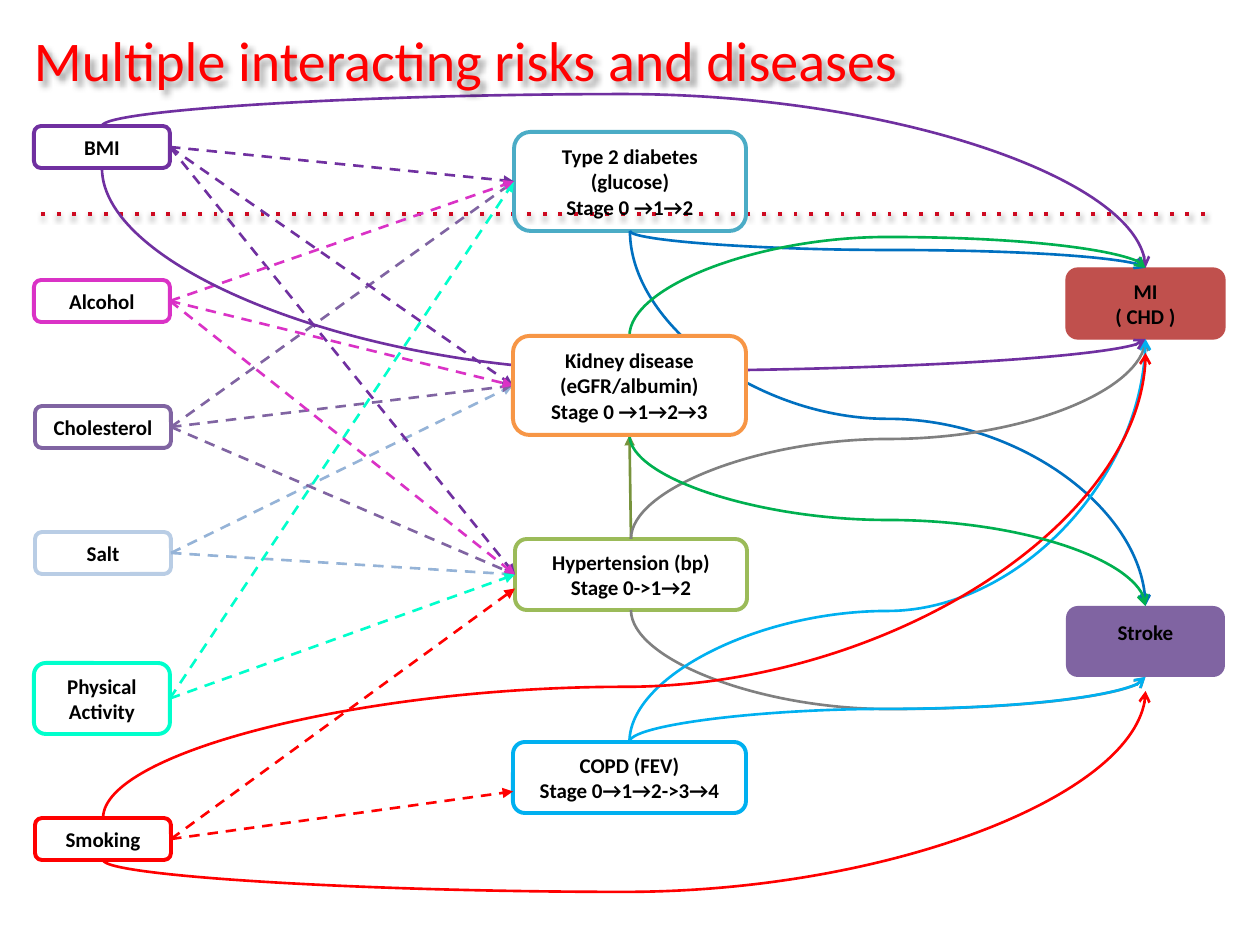
from lxml import etree
from pptx import Presentation
from pptx.dml.color import RGBColor
from pptx.enum.shapes import MSO_CONNECTOR, MSO_SHAPE
from pptx.enum.text import MSO_ANCHOR, PP_ALIGN
from pptx.oxml.ns import qn
from pptx.util import Emu, Pt

STRAIGHT, CURVE = MSO_CONNECTOR.STRAIGHT, MSO_CONNECTOR.CURVE
ROUNDED = MSO_SHAPE.ROUNDED_RECTANGLE
MIDDLE, TOP_ANCHOR = MSO_ANCHOR.MIDDLE, MSO_ANCHOR.TOP
CENTER = PP_ALIGN.CENTER
TOP, LEFT, BOTTOM, RIGHT = range(4)

BLACK = RGBColor(0x00, 0x00, 0x00)
WHITE = RGBColor(0xFF, 0xFF, 0xFF)
RED = RGBColor(0xFF, 0x00, 0x00)
CRIMSON = RGBColor(0xCD, 0x09, 0x20)
BRICK = RGBColor(0xC0, 0x50, 0x4D)
VIOLET = RGBColor(0x80, 0x64, 0xA2)
PURPLE = RGBColor(0x70, 0x30, 0xA0)
MAGENTA = RGBColor(0xDA, 0x32, 0xC6)
PALE_BLUE = RGBColor(0xB9, 0xCD, 0xE5)
SOFT_BLUE = RGBColor(0x95, 0xB3, 0xD7)
MINT = RGBColor(0x00, 0xFF, 0xCC)
TEAL = RGBColor(0x4B, 0xAC, 0xC6)
ORANGE = RGBColor(0xF7, 0x96, 0x46)
OLIVE = RGBColor(0x9B, 0xBB, 0x59)
DARK_OLIVE = RGBColor(0x77, 0x93, 0x3C)
SKY = RGBColor(0x00, 0xB0, 0xF0)
BLUE = RGBColor(0x00, 0x70, 0xC0)
GREEN = RGBColor(0x00, 0xB0, 0x50)
GREY = RGBColor(0x80, 0x80, 0x80)

FONT = "Calibri"
EMU_PER_PX = 914400 / 126

BOXES = {
    "mi": ("MI\n( CHD )", (1066, 268, 159, 71), BRICK, BRICK),
    "stroke": ("Stroke", (1066, 606, 159, 71), VIOLET, None),
    "salt": ("Salt", (35, 532, 136, 42), WHITE, PALE_BLUE),
    "cholesterol": ("Cholesterol", (35, 406, 136, 42), None, VIOLET),
    "activity": ("Physical Activity", (34, 663, 136, 71), None, MINT),
    "diabetes": ("Type 2 diabetes (glucose)\nStage 0 →1→2", (514, 132, 232, 99), None, TEAL),
    "hypertension": ("Hypertension (bp)\nStage 0->1→2", (515, 539, 232, 71), WHITE, OLIVE),
    "copd": ("COPD (FEV)\nStage 0→1→2->3→4", (513, 742, 233, 71), WHITE, SKY),
    "bmi": ("BMI", (34, 126, 136, 42), WHITE, PURPLE),
    "alcohol": ("Alcohol", (34, 280, 136, 42), WHITE, MAGENTA),
    "smoking": ("Smoking", (35, 818, 136, 42), WHITE, RED),
    "kidney": ("Kidney disease (eGFR/albumin)\nStage 0 →1→2→3", (513, 336, 233, 99), WHITE, ORANGE),
}

RISK_LINKS = [
    ("salt", SOFT_BLUE, ("hypertension", "kidney")),
    ("cholesterol", VIOLET, ("hypertension", "kidney", "diabetes")),
    ("activity", MINT, ("hypertension", "diabetes")),
    ("bmi", PURPLE, ("diabetes", "kidney", "hypertension")),
    ("alcohol", MAGENTA, ("kidney", "diabetes", "hypertension")),
    ("smoking", RED, ("copd", "hypertension")),
]

DISEASE_CURVES = [
    ("diabetes", BOTTOM, "mi", TOP, 250, BLUE, 0),
    ("diabetes", BOTTOM, "stroke", TOP, 419, BLUE, 0),
    ("hypertension", TOP, "mi", BOTTOM, 439, GREY, 0),
    ("hypertension", BOTTOM, "stroke", BOTTOM, 709, GREY, 0),
    ("copd", TOP, "stroke", BOTTOM, 709, SKY, 0),
    ("copd", TOP, "mi", BOTTOM, 611, SKY, 0),
    ("bmi", BOTTOM, "mi", BOTTOM, 371, PURPLE, 0),
    ("bmi", TOP, "mi", TOP, 94, PURPLE, 0),
    ("smoking", BOTTOM, "stroke", BOTTOM, 892, RED, 14),
    ("smoking", TOP, "mi", BOTTOM, 687, RED, 14),
    ("kidney", TOP, "mi", TOP, 237, GREEN, 0),
    ("kidney", BOTTOM, "stroke", TOP, 520, GREEN, 0),
]


def px(length):
    """Turn pixels into EMU."""
    return Emu(round(length * EMU_PER_PX))


def side_point(key, side):
    """Return the middle of one side of a box, in pixels."""
    left, top, width, height = BOXES[key][1]
    return {TOP: (left + width / 2, top), LEFT: (left, top + height / 2),
            BOTTOM: (left + width / 2, top + height),
            RIGHT: (left + width, top + height / 2)}[side]


def add_shadow(shape, blur, distance, angle, opacity):
    """Give a shape a soft black outer shadow."""
    effects = etree.SubElement(shape._element.spPr, qn("a:effectLst"))
    shadow = etree.SubElement(effects, qn("a:outerShdw"), blurRad=str(Pt(blur)),
                              dist=str(Pt(distance)), dir=str(angle * 60000),
                              algn="tl", rotWithShape="0")
    color = etree.SubElement(shadow, qn("a:srgbClr"), val=str(BLACK))
    etree.SubElement(color, qn("a:alpha"), val=str(opacity * 1000))


def style_line(connector, color, weight, dash=None, arrow=None):
    """Set the colour, weight, dash and arrowhead of a connector."""
    connector.line.color.rgb = color
    connector.line.width = Pt(weight)
    outline = connector._element.spPr.find(qn("a:ln"))
    if dash:
        etree.SubElement(outline, qn("a:prstDash"), val=dash)
    if arrow:
        etree.SubElement(outline, qn("a:tailEnd"), type=arrow)
        etree.SubElement(connector._element.spPr, qn("a:effectLst"))


def add_box(slide, text, area, fill, border):
    """Draw one labelled rounded box."""
    box = slide.shapes.add_shape(ROUNDED, *map(px, area))
    box.shadow.inherit = False
    if fill is None:
        box.fill.background()
    else:
        box.fill.solid()
        box.fill.fore_color.rgb = fill
    if border is None:
        box.line.fill.background()
    else:
        box.line.color.rgb = border
        box.line.width = Pt(0.75 if border == fill else 2.25)
    frame = box.text_frame
    frame.text = text
    frame.word_wrap = True
    frame.vertical_anchor = MIDDLE
    for paragraph in frame.paragraphs:
        paragraph.alignment = CENTER
        paragraph.font.name = FONT
        paragraph.font.size = Pt(12)
        paragraph.font.bold = True
        paragraph.font.color.rgb = BLACK
    return box


def add_link(slide, boxes, source, source_side, target, target_side, color, dash=None, drop=0):
    """Join two boxes with a straight arrow, ending lower by drop."""
    x1, y1 = side_point(source, source_side)
    x2, y2 = side_point(target, target_side)
    link = slide.shapes.add_connector(STRAIGHT, px(x1), px(y1), px(x2), px(y2 + drop))
    link.begin_connect(boxes[source], source_side)
    if not drop:
        link.end_connect(boxes[target], target_side)
    style_line(link, color, 1.5, dash, "triangle")


def add_curve(slide, source, source_side, target, target_side, via, color, drop):
    """Draw a curved arrow that leaves and arrives vertically, level at via."""
    x1, y1 = side_point(source, source_side)
    x2, y2 = side_point(target, target_side)
    y2 += drop
    width, height = abs(y2 - y1), x2 - x1
    curve = slide.shapes.add_connector(CURVE, 0, 0, px(width), px(height))
    curve.left = px((x1 + x2 - width) / 2)
    curve.top = px((y1 + y2 - height) / 2)
    frame = curve._element.spPr.find(qn("a:xfrm"))
    frame.set("flipH", "1")
    frame.set("rot", str((270 if y2 > y1 else 90) * 60000))
    if y2 < y1:
        frame.set("flipV", "1")
    bend = round((via - y1) / (y2 - y1) * 100000)
    guides = curve._element.spPr.find(qn("a:prstGeom")).find(qn("a:avLst"))
    etree.SubElement(guides, qn("a:gd"), name="adj1", fmla=f"val {bend}")
    style_line(curve, color, 1.5, arrow="arrow")


def add_title(slide, text):
    """Write the shadowed slide title."""
    title = slide.shapes.add_textbox(px(34), px(26), px(1116), px(158))
    frame = title.text_frame
    frame.text = text
    frame.word_wrap = True
    frame.vertical_anchor = TOP_ANCHOR
    frame.margin_left = frame.margin_right = frame.margin_top = frame.margin_bottom = 0
    font = frame.paragraphs[0].runs[0].font
    font.name, font.size, font.color.rgb = FONT, Pt(32), RED
    add_shadow(title, 3, 3, 45, 40)


def main():
    """Build the slide and save it."""
    deck = Presentation()
    deck.slide_width, deck.slide_height = px(1260), px(945)
    slide = deck.slides.add_slide(deck.slide_layouts[6])
    divider = slide.shapes.add_connector(STRAIGHT, px(1205), px(214), px(40), px(214))
    style_line(divider, CRIMSON, 2.25, "dot")
    add_shadow(divider, 3.1, 1.6, 90, 38)

    boxes = {key: add_box(slide, *details) for key, details in BOXES.items()}
    stroke_text = boxes["stroke"].text_frame
    stroke_text.vertical_anchor = TOP_ANCHOR
    stroke_text.margin_top = px(10)

    for risk, color, diseases in RISK_LINKS:
        for disease in diseases:
            drop = 14 if risk == "smoking" else 0
            add_link(slide, boxes, risk, RIGHT, disease, LEFT, color, "dash", drop)
    add_link(slide, boxes, "hypertension", TOP, "kidney", BOTTOM, DARK_OLIVE)
    for curve in DISEASE_CURVES:
        add_curve(slide, *curve)
    slide.shapes._spTree.append(boxes["kidney"]._element)
    add_title(slide, "Multiple interacting risks and diseases")
    deck.save("out.pptx")


if __name__ == "__main__":
    main()
